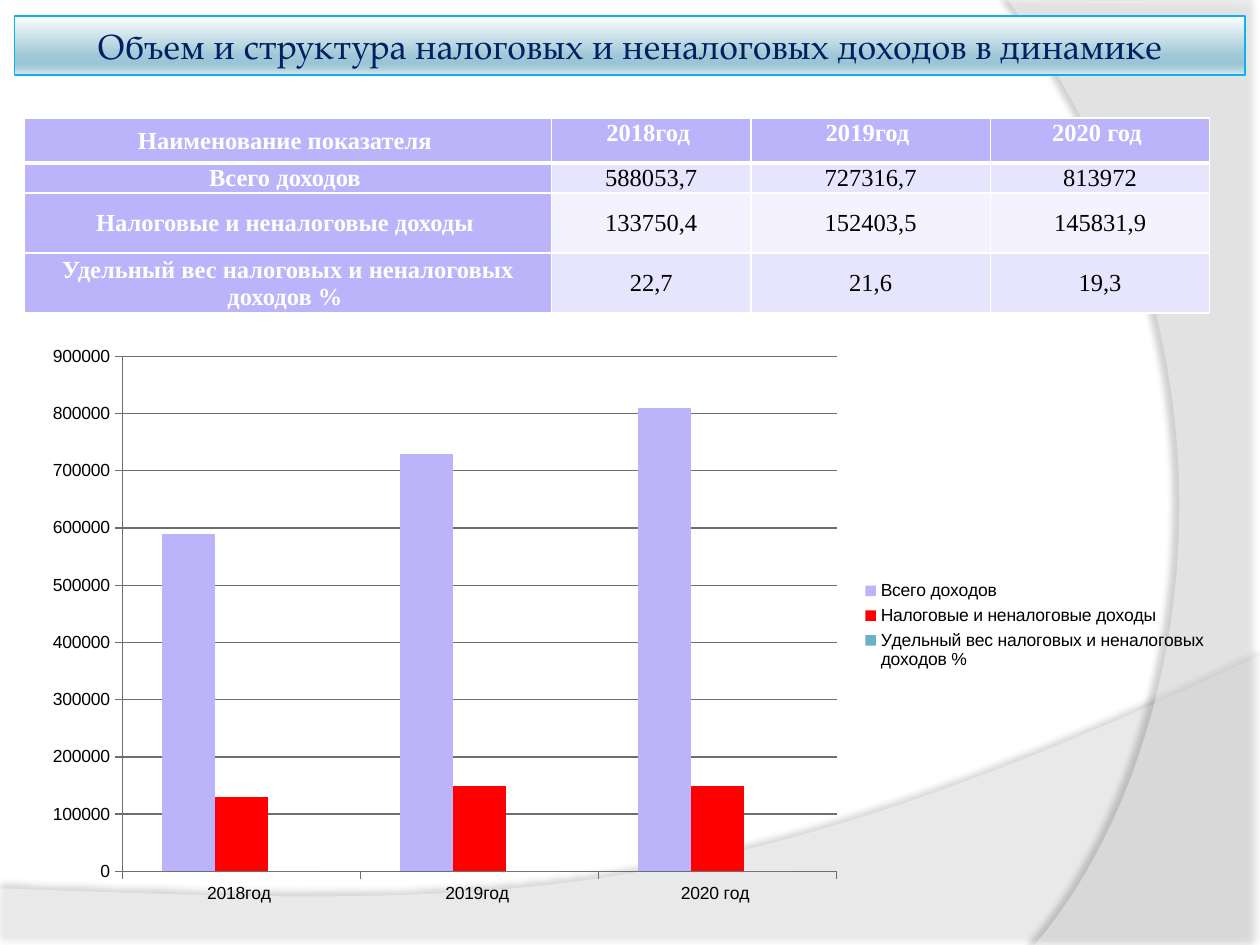
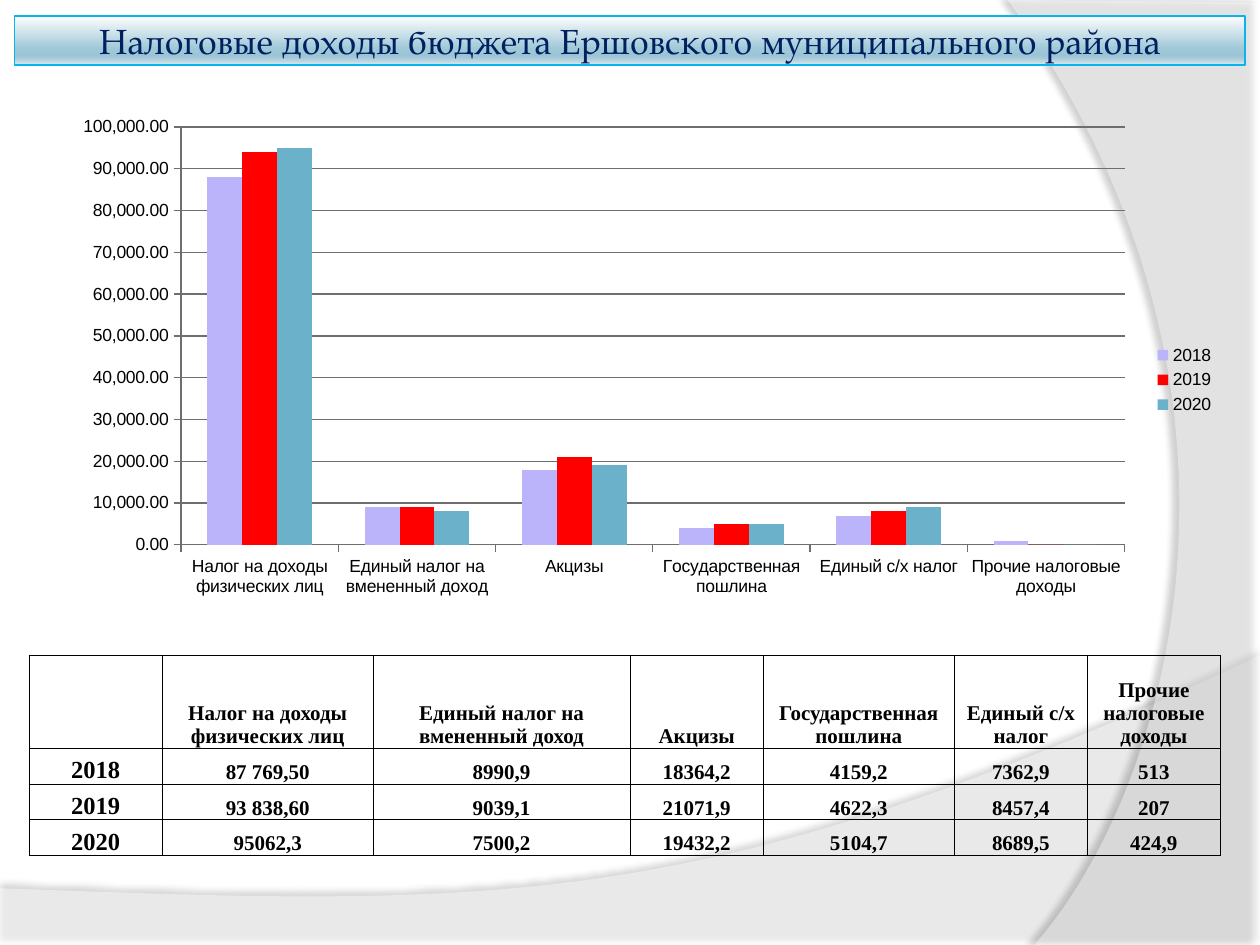
from dataclasses import dataclass

from lxml import etree
from pptx import Presentation
from pptx.chart.data import CategoryChartData
from pptx.dml.color import RGBColor
from pptx.enum.chart import XL_CHART_TYPE, XL_LEGEND_POSITION, XL_TICK_MARK
from pptx.enum.shapes import MSO_SHAPE
from pptx.enum.text import MSO_ANCHOR, PP_ALIGN
from pptx.oxml.ns import qn
from pptx.util import Pt

COLUMNS = XL_CHART_TYPE.COLUMN_CLUSTERED
LEGEND_RIGHT = XL_LEGEND_POSITION.RIGHT
TICK_OUTSIDE = XL_TICK_MARK.OUTSIDE
RECTANGLE = MSO_SHAPE.RECTANGLE
TOP, MIDDLE, BOTTOM = MSO_ANCHOR.TOP, MSO_ANCHOR.MIDDLE, MSO_ANCHOR.BOTTOM
CENTER = PP_ALIGN.CENTER


@dataclass(frozen=True)
class Theme:
    white: str = "FFFFFF"
    black: str = "000000"
    title_ink: str = "002060"
    title_line: str = "0AB3EC"
    title_stops: tuple = ((0, "FEFEFF"), (68, "9EC7D7"), (81, "9BC5D6"),
                          (86, "A5CAD9"), (100, "DAE8EE"))
    lilac: str = "BBB4FB"
    bands: tuple = ("E7E5FD", "F3F2FE")
    series: tuple = ("BBB4FB", "FF0000", "6BB1C9")
    grid: str = "6E6E6E"
    title_font: str = "TeX Gyre Pagella"
    table_font: str = "Times New Roman"
    chart_font: str = "Arial"
    title_size: int = 20
    large_size: int = 14
    table_size: int = 12
    chart_size: int = 10


def rgb(color):
    return RGBColor.from_string(color)


def child(parent, tag, **attributes):
    """Append an XML element with the given attributes."""
    texts = {name: str(value) for name, value in attributes.items()}
    return etree.SubElement(parent, qn(tag), texts)


def curve(start, control_1, control_2, end, steps=40):
    """Points on a cubic curve, both ends included."""
    points = []
    for step in range(steps + 1):
        t = step / steps
        weights = ((1 - t) ** 3, 3 * t * (1 - t) ** 2, 3 * t ** 2 * (1 - t), t ** 3)
        points.append(tuple(
            sum(weight * value for weight, value in zip(weights, values))
            for values in zip(start, control_1, control_2, end)))
    return points


def rounded(text, step):
    """Number in a table cell, rounded to a multiple of step."""
    return round(float(text.replace(" ", "").replace(",", ".")) / step) * step


class DeckBuilder:
    def __init__(self, theme):
        self.theme = theme
        self.deck = Presentation()
        self.deck.slide_width, self.deck.slide_height = Pt(720), Pt(540)
        self.page = None

    def add_page(self, title, title_height):
        self.page = self.deck.slides.add_slide(self.deck.slide_layouts[6])
        # Sweeping translucent waves behind everything
        self.wave(curve((720, 374.4), (402.5, 524.9), (281.5, 517.7), (0, 507.6))
                  + [(0, 540.7), (720, 540.7)], 45, 35, 3.5, 270)
        self.wave(curve((591.1, 540), (673.2, 445.7), (733, 216), (576, 0))
                  + [(720, 1.4), (720, 540)], 40, 45, 4, 180)
        self.title(title, title_height)

    def wave(self, points, opacity, shadow_opacity, distance, direction):
        first, *rest = [(Pt(x), Pt(y)) for x, y in points]
        builder = self.page.shapes.build_freeform(*first)
        builder.add_line_segments(rest)
        shape = builder.convert_to_shape()
        shape.fill.solid()
        shape.fill.fore_color.rgb = rgb(self.theme.white)
        shape.line.fill.background()
        shape.shadow.inherit = False
        properties = shape._element.spPr
        fill_color = properties.find(qn("a:solidFill")).find(qn("a:srgbClr"))
        child(fill_color, "a:alpha", val=opacity * 1000)
        shadow = child(properties.find(qn("a:effectLst")), "a:outerShdw",
                       blurRad=Pt(4), dist=Pt(distance), dir=direction * 60000,
                       algn="ctr", rotWithShape=0)
        shadow_color = child(shadow, "a:srgbClr", val=self.theme.black)
        child(shadow_color, "a:alpha", val=shadow_opacity * 1000)

    def title(self, text, height):
        box = self.page.shapes.add_shape(RECTANGLE, Pt(8.4), Pt(9.1), Pt(703.1), Pt(height))
        box.shadow.inherit = False
        box.line.color.rgb = rgb(self.theme.title_line)
        box.line.width = Pt(0.75)
        box.fill.gradient()
        box.fill.gradient_angle = 270
        stops = box._element.spPr.find(qn("a:gradFill")).find(qn("a:gsLst"))
        stops.clear()
        for position, color in self.theme.title_stops:
            child(child(stops, "a:gs", pos=position * 1000), "a:srgbClr", val=color)
        frame = box.text_frame
        frame.word_wrap = True
        frame.vertical_anchor = MIDDLE
        frame.margin_left = frame.margin_right = Pt(3.6)
        frame.margin_top = frame.margin_bottom = Pt(3.6)
        frame.text = text
        self.format(frame.paragraphs[0], self.theme.title_font,
                    self.theme.title_size, self.theme.title_ink)

    def format(self, para, font, size, color, bold=False):
        para.alignment = CENTER
        para.font.size = Pt(size)
        for span in para.runs:
            span.font.name = font
            span.font.size = Pt(size)
            span.font.bold = bold
            span.font.color.rgb = rgb(color)

    def table(self, left, top, widths, heights, rows, style):
        """Fill a table; style(row, column) gives the look of each cell."""
        frame = self.page.shapes.add_table(len(rows), len(widths), Pt(left), Pt(top),
                                           Pt(sum(widths)), Pt(sum(heights)))
        table = frame.table
        table.first_row = table.horz_banding = False
        for column, width in zip(table.columns, widths):
            column.width = Pt(width)
        for row, height in zip(table.rows, heights):
            row.height = Pt(height)
        for i, texts in enumerate(rows):
            for j, text in enumerate(texts):
                self.cell(table.cell(i, j), text, **style(i, j))

    def cell(self, cell, text, size, color, bold, anchor, fill, margin, border, edges):
        cell.text = text
        cell.vertical_anchor = anchor
        cell.margin_left = cell.margin_right = cell.margin_top = Pt(margin)
        cell.margin_bottom = 0
        self.format(cell.text_frame.paragraphs[0], self.theme.table_font, size, color, bold)
        if fill:
            cell.fill.solid()
            cell.fill.fore_color.rgb = rgb(fill)
        else:
            cell.fill.background()
        properties = cell._tc.get_or_add_tcPr()
        for index, (side, width) in enumerate(zip("LRTB", edges)):
            line = child(properties, f"a:ln{side}", w=Pt(width))
            child(child(line, "a:solidFill"), "a:srgbClr", val=border)
            properties.insert(index, line)

    def chart(self, bounds, plot_bounds, rows, step, axis_max, axis_unit, number_format):
        """Column chart of a table: header row gives categories, other rows series."""
        data = CategoryChartData(number_format=number_format)
        data.categories = rows[0][1:]
        for name, *values in rows[1:]:
            data.add_series(name, [rounded(value, step) for value in values])
        chart = self.page.shapes.add_chart(COLUMNS, *map(Pt, bounds), data).chart
        chart.has_title = False
        chart.font.name = self.theme.chart_font
        chart.font.size = Pt(self.theme.chart_size)
        chart.font.color.rgb = rgb(self.theme.black)
        chart.has_legend = True
        chart.legend.position = LEGEND_RIGHT
        chart.legend.include_in_layout = False

        # Bars
        plot = chart.plots[0]
        plot.gap_width, plot.overlap = 150, 0
        plot.vary_by_categories = False
        for series, color in zip(plot.series, self.theme.series):
            series.format.fill.solid()
            series.format.fill.fore_color.rgb = rgb(color)

        # Axes and gridlines
        values = chart.value_axis
        values.minimum_scale, values.maximum_scale = 0, axis_max
        values.major_unit = axis_unit
        values.has_major_gridlines = True
        values.tick_labels.number_format = number_format
        values.tick_labels.number_format_is_linked = False
        for axis in (values, chart.category_axis):
            axis.major_tick_mark = TICK_OUTSIDE
        for part in (values, chart.category_axis, values.major_gridlines):
            part.format.line.color.rgb = rgb(self.theme.grid)
            part.format.line.width = Pt(0.75)

        # Fixed inner plot area, as shares of the chart's size
        area = chart._chartSpace.chart.plotArea
        for old_layout in area.findall(qn("c:layout")):
            area.remove(old_layout)
        layout = child(area, "c:layout")
        area.insert(0, layout)
        manual = child(layout, "c:manualLayout")
        child(manual, "c:layoutTarget", val="inner")
        for name in "xy":
            child(manual, f"c:{name}Mode", val="edge")
        for name, length, whole in zip("xywh", plot_bounds, bounds[2:] * 2):
            child(manual, f"c:{name}", val=length / whole)


THEME = Theme()

TOTALS = [
    ["Наименование показателя ", "2018год ", "2019год ", "2020 год "],
    ["Всего доходов ", "588053,7", "727316,7", "813972"],
    ["Налоговые и неналоговые доходы ", "133750,4", "152403,5", "145831,9"],
    ["Удельный вес налоговых и неналоговых доходов % ", "22,7", "21,6", "19,3"],
]
TAXES = [
    ["", "Налог на доходы физических лиц", "Единый налог на вмененный доход", "Акцизы",
     "Государственная пошлина", "Единый с/х налог", "Прочие налоговые доходы"],
    ["2018", "87 769,50", "8990,9", "18364,2", "4159,2", "7362,9", "513"],
    ["2019", "93 838,60", "9039,1", "21071,9", "4622,3", "8457,4", "207"],
    ["2020", "95062,3", "7500,2", "19432,2", "5104,7", "8689,5", "424,9"],
]


def totals_style(row, column):
    heading = row == 0 or column == 0
    return dict(
        size=THEME.large_size, bold=heading,
        color=THEME.white if heading else THEME.black,
        anchor=TOP if row == 0 and column else MIDDLE,
        fill=THEME.lilac if heading else THEME.bands[(row - 1) % 2],
        margin=0.7, border=THEME.white,
        edges=(1, 1, 3 if row == 1 else 1, 3 if row == 0 else 1))


def taxes_style(row, column):
    return dict(
        size=THEME.large_size if column == 0 else THEME.table_size, bold=True,
        color=THEME.black, anchor=BOTTOM, fill=None, margin=0,
        border=THEME.black, edges=(0.5,) * 4)


def main():
    builder = DeckBuilder(THEME)

    # Slide 1: totals by year
    builder.add_page("Объем и структура налоговых и неналоговых доходов в динамике", 33.8)
    builder.table(14, 67.5, [301.2, 113.9, 136.9, 125.3], [25.7, 17, 34.3, 34.3],
                  TOTALS, totals_style)
    builder.chart((16.6, 191.5, 680.4, 331.9), (53.3, 12.1, 408.2, 294.4),
                  TOTALS, 10000, 900000, 100000, "0")

    # Slide 2: tax revenue by kind
    builder.add_page("Налоговые доходы бюджета Ершовского муниципального района", 28.1)
    builder.chart((28.1, 56.2, 673.2, 321.8), (75.4, 16.4, 539.2, 238.8),
                  TAXES, 1000, 100000, 10000, "#,##0.00")
    builder.table(16.6, 374.4, [76.2, 120.4, 146.9, 76.1, 109.2, 76, 76],
                  [53.3, 20.4, 20.4, 20.4], TAXES, taxes_style)

    builder.deck.save("out.pptx")


if __name__ == "__main__":
    main()
